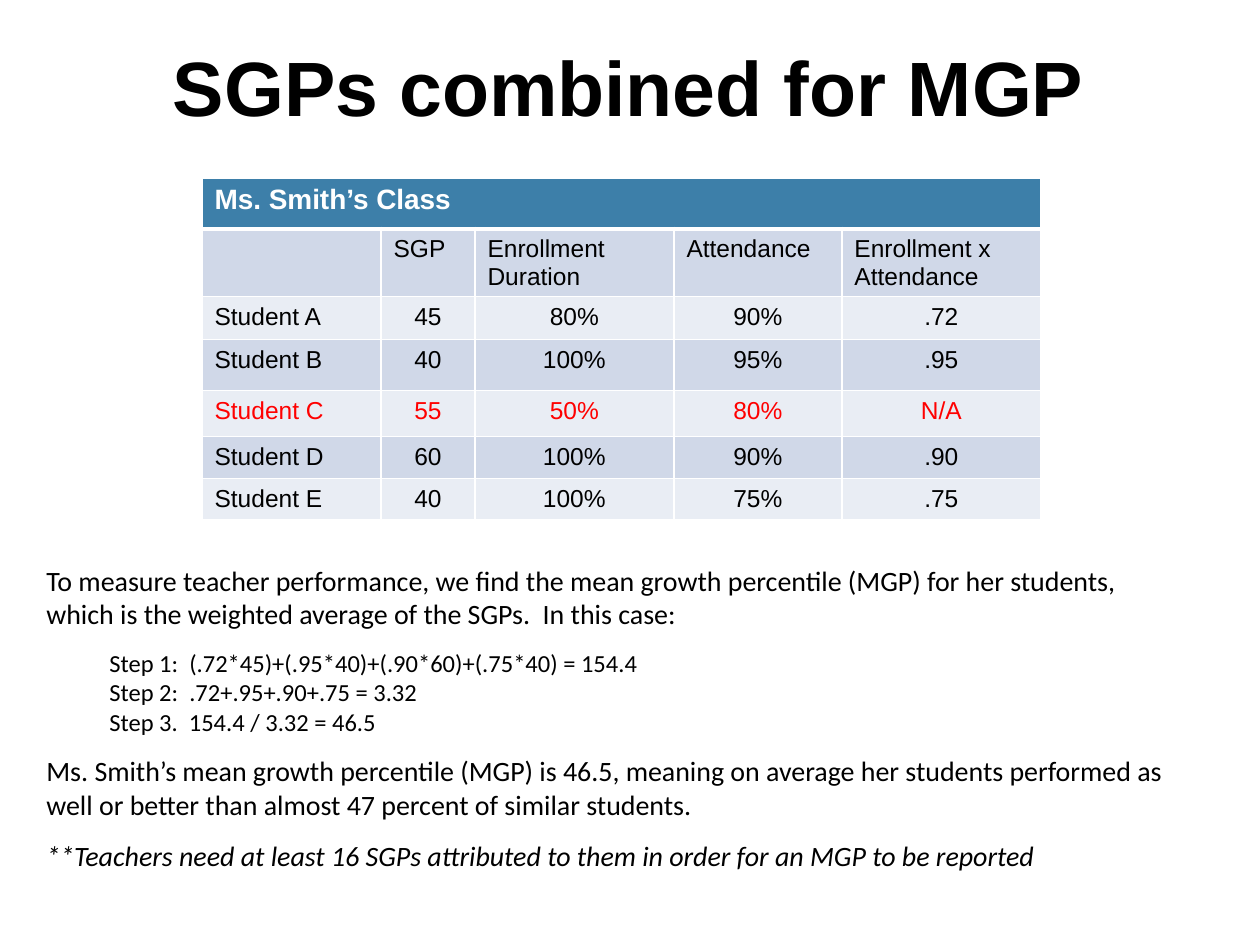
from pptx import Presentation
from pptx.dml.color import RGBColor
from pptx.enum.text import MSO_ANCHOR, MSO_AUTO_SIZE, PP_ALIGN
from pptx.oxml.ns import qn
from pptx.util import Emu, Pt
from lxml.etree import SubElement

BLACK = RGBColor(0x00, 0x00, 0x00)
WHITE = RGBColor(0xFF, 0xFF, 0xFF)
RED = RGBColor(0xFF, 0x00, 0x00)
BLUE = RGBColor(0x3D, 0x7F, 0xA9)
BAND_DARK = RGBColor(0xD0, 0xD8, 0xE8)
BAND_LIGHT = RGBColor(0xE9, 0xED, 0xF4)

# Content
TITLE = "SGPs combined for MGP"
CLASS_NAME = "Ms. Smith’s Class"
ROWS = [
    ("", "SGP", "Enrollment Duration", "Attendance", "Enrollment x Attendance"),
    ("Student A", "45", "80%", "90%", ".72"),
    ("Student B", "40", "100%", "95%", ".95"),
    ("Student C", "55", "50%", "80%", "N/A"),
    ("Student D", "60", "100%", "90%", ".90"),
    ("Student E", "40", "100%", "75%", ".75"),
]
EXCLUDED = "Student C"
COL_WIDTHS = [179, 94, 199, 168, 199]
ROW_HEIGHTS = [51, 52, 43, 51, 46, 42, 41]
STEP = dict(size=14, indent=63)
NOTES = [
    ("To measure teacher performance, we find the mean growth percentile (MGP) for "
     "her students, which is the weighted average of the SGPs.  In this case:", {}),
    ("Step 1:  (.72*45)+(.95*40)+(.90*60)+(.75*40) = 154.4", dict(STEP, before=10)),
    ("Step 2:  .72+.95+.90+.75 = 3.32", STEP),
    ("Step 3.  154.4 / 3.32 = 46.5", STEP),
    ("Ms. Smith’s mean growth percentile (MGP) is 46.5, meaning on average her students "
     "performed as well or better than almost 47 percent of similar students.",
     dict(before=10)),
    ("**Teachers need at least 16 SGPs attributed to them in order for an MGP to be "
     "reported", dict(before=10, italic=True)),
]


def px(n):
    return Emu(round(n * 914400 / 126))


def write(p, text, size=16, font="Arial", color=BLACK, bold=False, italic=False,
          align=PP_ALIGN.LEFT, before=0, indent=0):
    p.alignment = align
    p.space_before = Pt(before)
    if indent:
        p.level = 1
        pPr = p._p.get_or_add_pPr()
        pPr.set("marL", str(px(indent)))
        pPr.set("indent", "0")
    if not text:
        p.font.size = Pt(size)
        return
    r = p.add_run()
    r.text = text
    f = r.font
    f.name, f.size, f.bold, f.italic = font, Pt(size), bold, italic
    f.color.rgb = color


def style_cell(cell, fill, top=1, bottom=1):
    tcPr = cell._tc.get_or_add_tcPr()
    for side, width in (("L", 1), ("R", 1), ("T", top), ("B", bottom)):
        ln = SubElement(tcPr, qn(f"a:ln{side}"), w=str(Pt(width)))
        SubElement(SubElement(ln, qn("a:solidFill")), qn("a:srgbClr"), val=str(WHITE))
    cell.fill.solid()
    cell.fill.fore_color.rgb = fill


prs = Presentation()
prs.slide_width, prs.slide_height = px(1260), px(945)
s = prs.slides.add_slide(prs.slide_layouts[5])

# Title
title = s.shapes.title
title.left, title.top, title.width, title.height = px(62), px(21), px(1134), px(117)
tf = title.text_frame
tf.auto_size = MSO_AUTO_SIZE.NONE
tf.vertical_anchor = MSO_ANCHOR.BOTTOM
p = tf.paragraphs[0]
write(p, TITLE, size=44, bold=True, align=PP_ALIGN.CENTER)
p.line_spacing = Pt(36)

# Class table
tbl = s.shapes.add_table(len(ROW_HEIGHTS), len(COL_WIDTHS), px(202), px(178),
                         px(sum(COL_WIDTHS)), px(sum(ROW_HEIGHTS))).table
for col, w in zip(tbl.columns, COL_WIDTHS):
    col.width = px(w)
for row, h in zip(tbl.rows, ROW_HEIGHTS):
    row.height = px(h)

tbl.cell(0, 0).merge(tbl.cell(0, len(COL_WIDTHS) - 1))
for c in range(len(COL_WIDTHS)):
    style_cell(tbl.cell(0, c), BLUE, bottom=3)
write(tbl.cell(0, 0).text_frame.paragraphs[0], CLASS_NAME, color=WHITE, bold=True)

for i, values in enumerate(ROWS, start=1):
    color = RED if values[0] == EXCLUDED else BLACK
    for c, text in enumerate(values):
        cell = tbl.cell(i, c)
        style_cell(cell, BAND_DARK if i % 2 else BAND_LIGHT, top=3 if i == 1 else 1)
        align = PP_ALIGN.CENTER if i > 1 and c > 0 else PP_ALIGN.LEFT
        write(cell.text_frame.paragraphs[0], text, size=14, color=color, align=align)

# Explanation
tf = s.shapes.add_textbox(px(34), px(557), px(1156), px(323)).text_frame
tf.word_wrap = True
tf.auto_size = MSO_AUTO_SIZE.SHAPE_TO_FIT_TEXT
for i, (text, fmt) in enumerate(NOTES):
    p = tf.add_paragraph() if i else tf.paragraphs[0]
    write(p, text, font="Calibri", **fmt)

prs.save("out.pptx")
